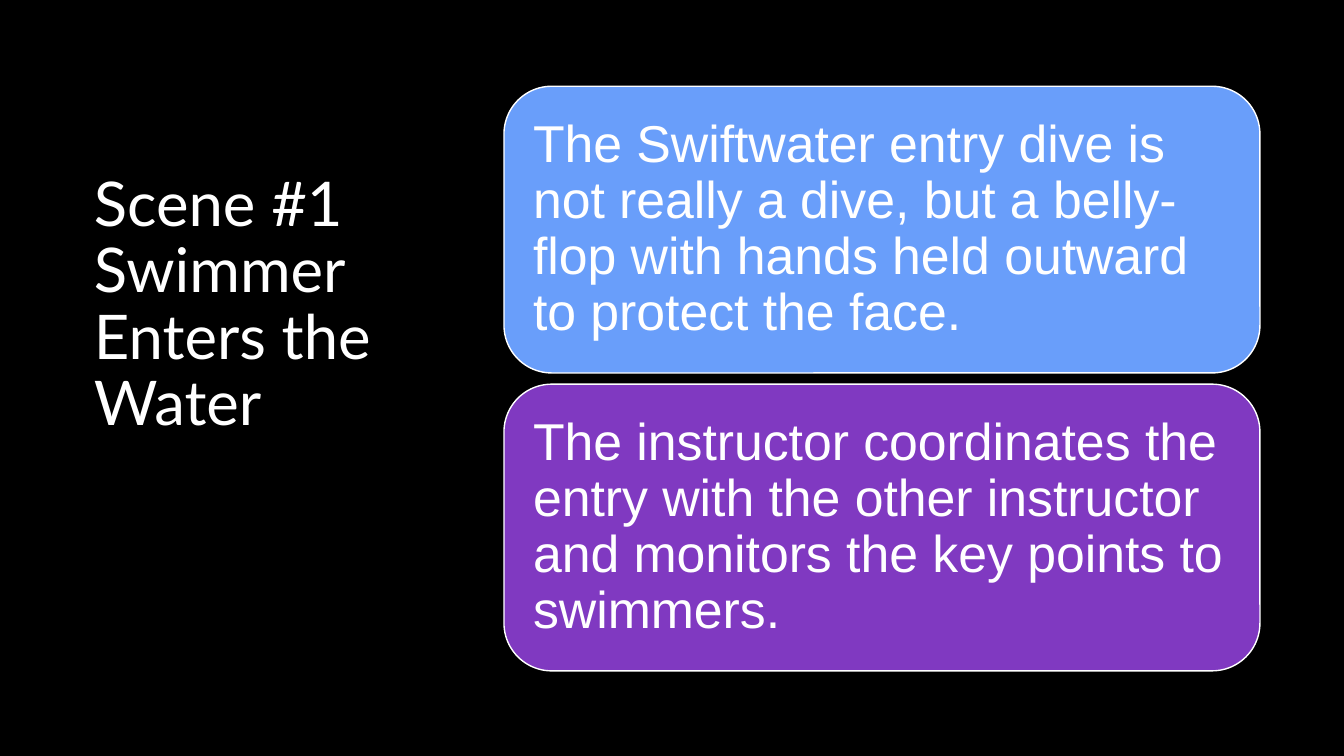
from pptx import Presentation
from pptx.dml.color import RGBColor
from pptx.enum.shapes import MSO_SHAPE as Shape
from pptx.enum.text import MSO_ANCHOR as Anchor, PP_ALIGN as Align
from pptx.util import Pt

COLORS = {"back": "000000", "text": "FFFFFF", "blue": "699EFA", "purple": "8039C1"}

TITLE = "Scene #1\vSwimmer Enters the Water"
CARDS = [
    ("blue", "The Swiftwater entry dive is not really a dive, but a belly-flop "
             "with hands held outward to protect the face."),
    ("purple", "The instructor coordinates the entry with the other instructor "
               "and monitors the key points to swimmers."),
]
LEFT, TOP, WIDTH, HEIGHT, STEP = 360, 61.6, 540, 204.8, 212.8


def color(name):
    return RGBColor.from_string(COLORS[name])


def write(shape, text, font, size, **frame):
    box = shape.text_frame
    for key, value in {"word_wrap": True, **frame}.items():
        setattr(box, key, value)
    box.text = text
    para = box.paragraphs[0]
    para.alignment = Align.LEFT
    para.line_spacing = 0.9
    for run in para.runs:
        run.font.name = font
        run.font.size = Pt(size)
        run.font.color.rgb = color("text")


def add_title(slide):
    box = slide.shapes.add_textbox(Pt(60), Pt(120), Pt(300), Pt(300))
    write(box, TITLE, "Lato", 44)


def add_card(slide, top, fill, text):
    card = slide.shapes.add_shape(
        Shape.ROUNDED_RECTANGLE, Pt(LEFT), Pt(top), Pt(WIDTH), Pt(HEIGHT))
    card.shadow.inherit = False
    card.fill.solid()
    card.fill.fore_color.rgb = color(fill)
    card.line.color.rgb = color("text")
    card.line.width = Pt(1)
    sides = ("left", "top", "right", "bottom")
    inset = {f"margin_{side}": Pt(10.8) for side in sides}
    write(card, text, "Arial", 37, vertical_anchor=Anchor.MIDDLE, **inset)


def main():
    deck = Presentation()
    deck.slide_width, deck.slide_height = Pt(960), Pt(540)
    slide = deck.slides.add_slide(deck.slide_layouts[6])
    slide.background.fill.solid()
    slide.background.fill.fore_color.rgb = color("back")
    add_title(slide)
    for row, (fill, text) in enumerate(CARDS):
        add_card(slide, TOP + row * STEP, fill, text)
    deck.save("out.pptx")


if __name__ == "__main__":
    main()
